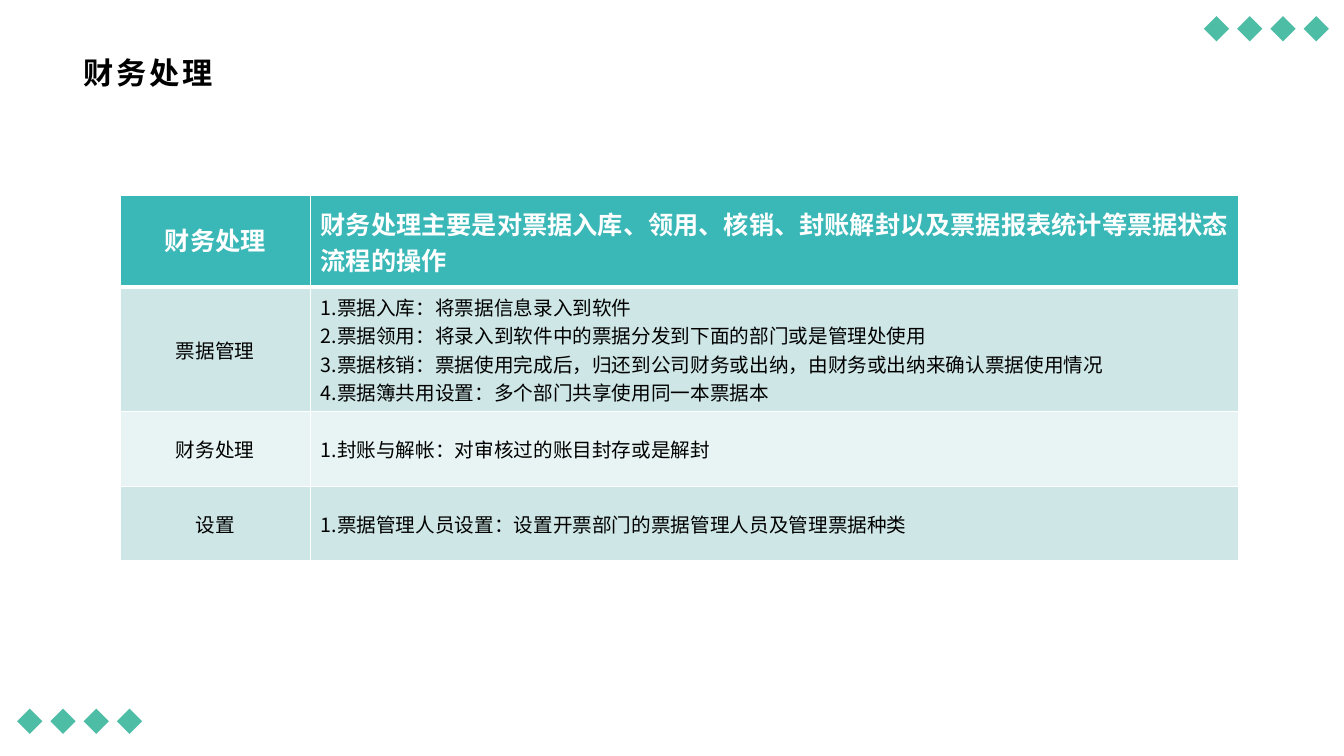
from lxml import etree
from pptx import Presentation
from pptx.dml.color import RGBColor
from pptx.enum import shapes, text
from pptx.oxml import ns
from pptx.util import Inches, Pt

HEADING = "财务处理"
HEADER = ("财务处理", "财务处理主要是对票据入库、领用、核销、封账解封以及票据报表统计等票据状态流程的操作")
TOPICS = [
    ("票据管理", [
        "1.票据入库：将票据信息录入到软件",
        "2.票据领用：将录入到软件中的票据分发到下面的部门或是管理处使用",
        "3.票据核销：票据使用完成后，归还到公司财务或出纳，由财务或出纳来确认票据使用情况",
        "4.票据簿共用设置：多个部门共享使用同一本票据本",
    ]),
    ("财务处理", ["1.封账与解帐：对审核过的账目封存或是解封"]),
    ("设置", ["1.票据管理人员设置：设置开票部门的票据管理人员及管理票据种类"]),
]
DIAMOND_ROWS = [(0.17, 7.03), (11.94, 0.16)]
COLUMN_WIDTHS = [1.89, 9.2]
ROW_HEIGHTS = [0.91, 0.93, 0.74, 0.74]

BLACK = RGBColor(0x00, 0x00, 0x00)
WHITE = RGBColor(0xFF, 0xFF, 0xFF)
GREEN = RGBColor(0x4E, 0xBD, 0xA5)
TEAL = RGBColor(0x3A, 0xB7, 0xB7)
BANDS = [RGBColor(0xCE, 0xE6, 0xE6), RGBColor(0xE8, 0xF3, 0xF3)]
LATIN, HAN = "Arial", "Noto Sans CJK SC"


def add_run(paragraph, words, size, color, bold, face):
    run = paragraph.add_run()
    run.text = words
    run.font.size = Pt(size)
    run.font.bold = bold
    run.font.color.rgb = color
    run.font.name = face
    east_asian = etree.SubElement(run.font._element, ns.qn("a:ea"))
    east_asian.set("typeface", face)
    return run


def add_border(cell, side, width):
    properties = cell._tc.get_or_add_tcPr()
    line = etree.SubElement(properties, ns.qn("a:ln" + side), w=str(Pt(width)))
    fill = etree.SubElement(line, ns.qn("a:solidFill"))
    etree.SubElement(fill, ns.qn("a:srgbClr"), val=str(WHITE))


def fill_cell(cell, row, column, lines):
    is_header = row == 0
    for side in "LRTB":
        thick = (row, side) in [(0, "B"), (1, "T")]
        add_border(cell, side, 3 if thick else 1)
    cell.fill.solid()
    cell.fill.fore_color.rgb = TEAL if is_header else BANDS[(row - 1) % 2]
    cell.vertical_anchor = text.MSO_ANCHOR.MIDDLE
    face = LATIN if is_header and column == 0 else HAN
    frame = cell.text_frame
    for index, words in enumerate(lines):
        paragraph = frame.add_paragraph() if index else frame.paragraphs[0]
        paragraph.alignment = text.PP_ALIGN.LEFT if column else text.PP_ALIGN.CENTER
        add_run(paragraph, words, 18 if is_header else 14,
                WHITE if is_header else BLACK, is_header, face)


def add_diamonds(slide, left, top):
    group = slide.shapes.add_group_shape()
    for index in range(4):
        diamond = group.shapes.add_shape(
            shapes.MSO_SHAPE.DIAMOND, Inches(left + index * 0.33), Inches(top),
            Inches(0.25), Inches(0.25))
        diamond.shadow.inherit = False
        diamond.fill.solid()
        diamond.fill.fore_color.rgb = GREEN
        diamond.line.fill.background()


def add_heading(slide):
    heading = slide.shapes.title
    heading.left, heading.top = Inches(0.73), Inches(0.48)
    heading.width, heading.height = Inches(11.87), Inches(0.48)
    frame = heading.text_frame
    frame.auto_size = text.MSO_AUTO_SIZE.NONE
    frame.vertical_anchor = text.MSO_ANCHOR.MIDDLE
    frame.paragraphs[0].alignment = text.PP_ALIGN.LEFT
    run = add_run(frame.paragraphs[0], HEADING, 21.6, BLACK, True, LATIN)
    run.font._element.set("spc", "200")


def add_topics(slide):
    rows = [(HEADER[0], [HEADER[1]])] + TOPICS
    topics = slide.shapes.add_table(
        len(rows), len(COLUMN_WIDTHS), Inches(1.19), Inches(1.94),
        Inches(sum(COLUMN_WIDTHS)), Inches(sum(ROW_HEIGHTS))).table
    for column, width in zip(topics.columns, COLUMN_WIDTHS):
        column.width = Inches(width)
    for row, height in zip(topics.rows, ROW_HEIGHTS):
        row.height = Inches(height)
    for row, (topic, details) in enumerate(rows):
        for column, lines in enumerate([[topic], details]):
            fill_cell(topics.cell(row, column), row, column, lines)


def main():
    deck = Presentation()
    deck.slide_width, deck.slide_height = Inches(13.33), Inches(7.5)
    slide = deck.slides.add_slide(deck.slide_layouts[5])
    for left, top in DIAMOND_ROWS:
        add_diamonds(slide, left, top)
    add_heading(slide)
    add_topics(slide)
    deck.save("out.pptx")


if __name__ == "__main__":
    main()
